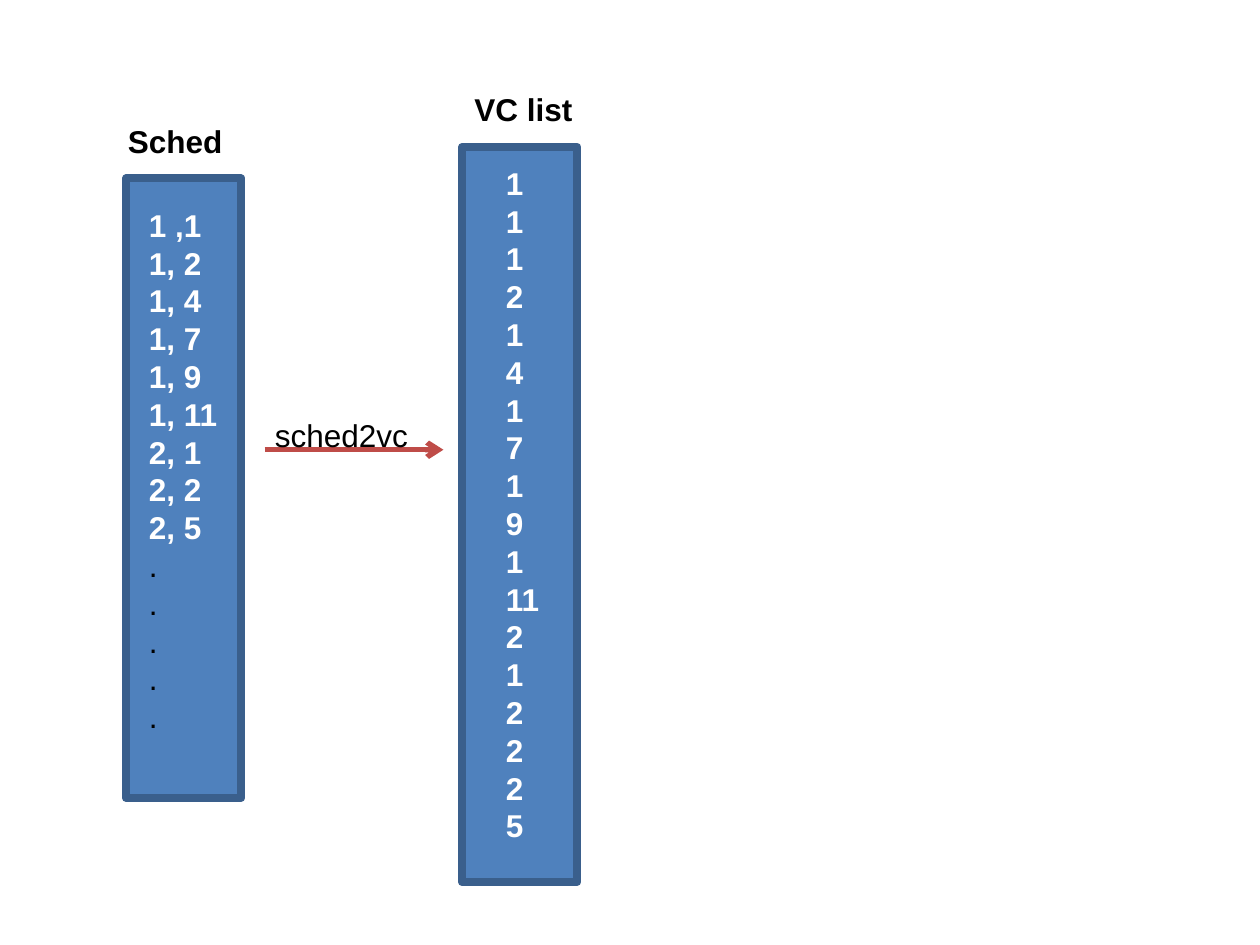
from dataclasses import dataclass

from lxml import etree
from pptx import Presentation
from pptx.dml.color import RGBColor
from pptx.enum.shapes import MSO_CONNECTOR, MSO_SHAPE
from pptx.enum.text import MSO_ANCHOR, MSO_AUTO_SIZE
from pptx.oxml.ns import qn
from pptx.slide import Slide
from pptx.util import Pt

RECTANGLE = MSO_SHAPE.RECTANGLE
STRAIGHT = MSO_CONNECTOR.STRAIGHT
TOP = MSO_ANCHOR.TOP
FIT_SHAPE = MSO_AUTO_SIZE.SHAPE_TO_FIT_TEXT

BLUE = RGBColor(0x4F, 0x81, 0xBD)
DARK_BLUE = RGBColor(0x3A, 0x5F, 0x8C)
RED = RGBColor(0xBF, 0x4C, 0x48)
WHITE = RGBColor(0xFF, 0xFF, 0xFF)
BLACK = RGBColor(0, 0, 0)

BLANK_LAYOUT = 6
COLUMN_WIDTH = 66
LABEL_HEIGHT = 28.8


@dataclass(frozen=True)
class Area:
    """A rectangle on the slide, in points."""
    left: float
    top: float
    width: float
    height: float

    def lengths(self) -> tuple[Pt, Pt, Pt, Pt]:
        return Pt(self.left), Pt(self.top), Pt(self.width), Pt(self.height)


@dataclass(frozen=True)
class Column:
    heading: str
    heading_area: Area
    bar: Area
    entries: list[str]
    entries_area: Area


COLUMNS = [
    Column("Sched", Area(66, 66, 69, LABEL_HEIGHT),
           Area(72, 102, COLUMN_WIDTH, 354),
           ["1 ,1", "1, 2", "1, 4", "1, 7", "1, 9", "1, 11",
            "2, 1", "2, 2", "2, 5"] + ["."] * 5,
           Area(78, 114, 53.4, 334)),
    Column("VC list", Area(264, 48, 71.4, LABEL_HEIGHT),
           Area(264, 84, COLUMN_WIDTH, 420),
           "1 1 1 2 1 4 1 7 1 9 1 11 2 1 2 2 2 5".split(),
           Area(282, 90, 33.8, 399.6)),
]


def add_text(page: Slide, area: Area, lines: list[str],
             color: RGBColor, bold: bool) -> None:
    box = page.shapes.add_textbox(*area.lengths())
    frame = box.text_frame
    frame.word_wrap = False
    frame.auto_size = FIT_SHAPE
    frame.vertical_anchor = TOP
    frame.text = "\n".join(lines)
    for para in frame.paragraphs:
        para.line_spacing = Pt(21.6)
        is_dot = para.text == "."
        for span in para.runs:
            span.font.name = "Arial"
            span.font.size = Pt(18)
            span.font.bold = bold and not is_dot
            span.font.color.rgb = BLACK if is_dot else color


def add_column(page: Slide, column: Column) -> None:
    bar = page.shapes.add_shape(RECTANGLE, *column.bar.lengths())
    bar.shadow.inherit = False
    bar.fill.solid()
    bar.fill.fore_color.rgb = BLUE
    bar.line.color.rgb = DARK_BLUE
    bar.line.width = Pt(4.5)
    add_text(page, column.entries_area, column.entries, WHITE, True)
    add_text(page, column.heading_area, [column.heading], BLACK, True)


def add_arrow(page: Slide, start: float, end: float, height: float) -> None:
    arrow = page.shapes.add_connector(
        STRAIGHT, Pt(start), Pt(height), Pt(end), Pt(height))
    arrow.line.color.rgb = RED
    arrow.line.width = Pt(3)
    # Arrowhead, and no shadow
    properties = arrow.element.spPr
    etree.SubElement(properties.find(qn("a:ln")), qn("a:tailEnd"), type="arrow")
    etree.SubElement(properties, qn("a:effectLst"))


def main() -> None:
    deck = Presentation()
    deck.slide_width, deck.slide_height = Pt(720), Pt(540)
    page = deck.slides.add_slide(deck.slide_layouts[BLANK_LAYOUT])

    schedule, vc_list = COLUMNS
    add_column(page, schedule)
    # Conversion step between the two columns
    add_arrow(page, 151.2, 253.4, 257)
    add_text(page, Area(150, 234, 91.2, LABEL_HEIGHT), ["sched2vc"], BLACK, False)
    add_column(page, vc_list)

    deck.save("out.pptx")


if __name__ == "__main__":
    main()
